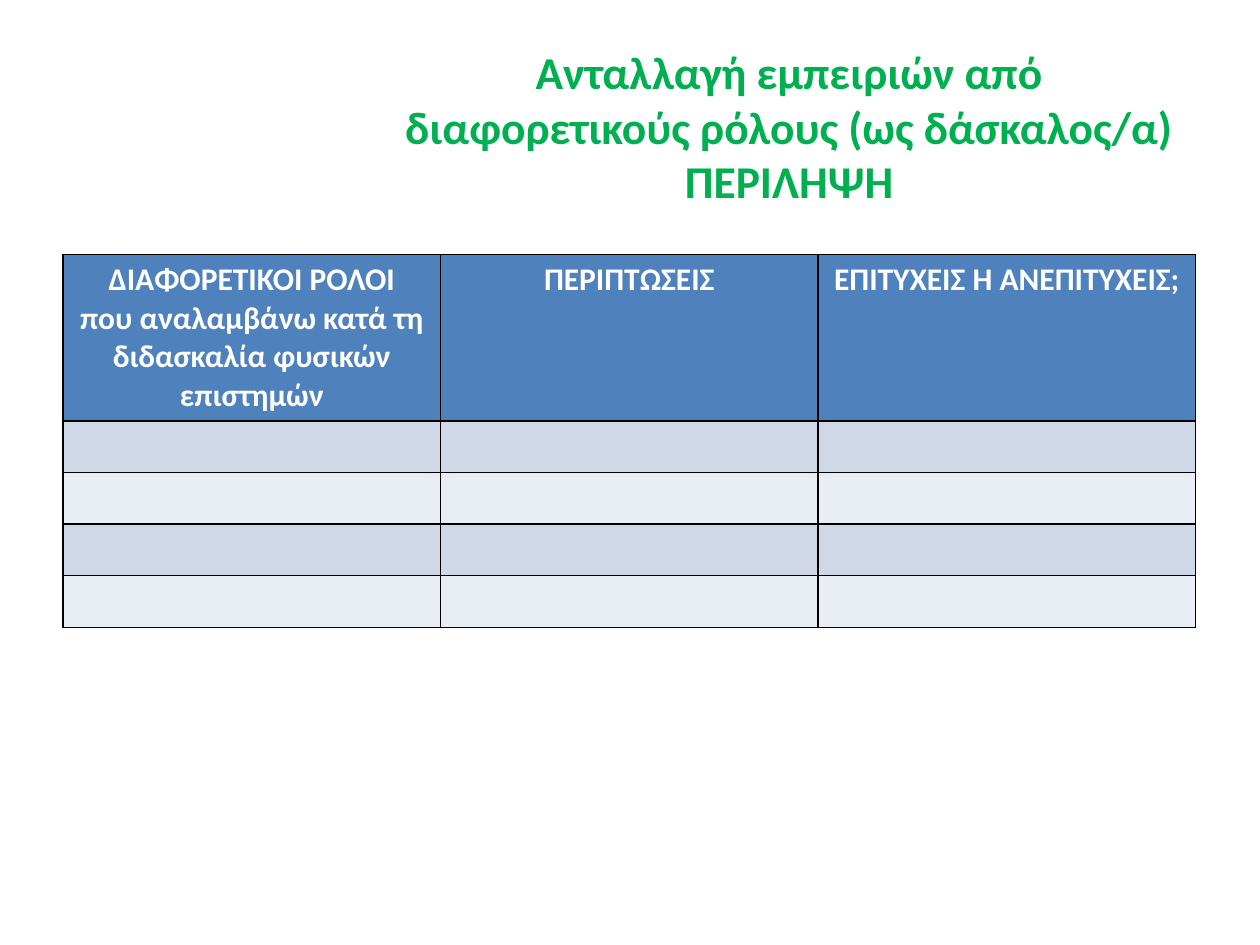
from typing import NamedTuple

from lxml import etree
from pptx import Presentation
from pptx import util as u
from pptx.dml import color
from pptx.enum import text
from pptx.oxml import ns

FONT = "Calibri"
HEADER_FILL = "4F81BD"
BAND_FILLS = ("D0D8E8", "E9EDF4")
BODY_ROWS = 4
HEADER_HEIGHT, BODY_HEIGHT = 1.32, 0.41


class Box(NamedTuple):
    left: float
    top: float
    width: float
    height: float

    def lengths(self) -> list[u.Length]:
        return [u.Inches(value) for value in self]


class Style(NamedTuple):
    size: float
    colour: str


TITLE_STYLE = Style(26, "00B050")
HEADER_STYLE = Style(18, "FFFFFF")

TITLE = "Ανταλλαγή εμπειριών από διαφορετικούς ρόλους (ως δάσκαλος/α) ΠΕΡΙΛΗΨΗ"
HEADERS = (
    ("ΔΙΑΦΟΡΕΤΙΚΟΙ ΡΟΛΟΙ", "που αναλαμβάνω κατά τη διδασκαλία φυσικών επιστημών"),
    ("ΠΕΡΙΠΤΩΣΕΙΣ",),
    ("ΕΠΙΤΥΧΕΙΣ Ή ΑΝΕΠΙΤΥΧΕΙΣ;",),
)


def rgb(colour: str) -> color.RGBColor:
    return color.RGBColor.from_string(colour)


def write(frame, lines: tuple[str, ...], style: Style) -> None:
    """Fill a text frame with centred bold paragraphs."""
    frame.word_wrap = True
    frame.text = "\n".join(lines)
    for paragraph in frame.paragraphs:
        paragraph.alignment = text.PP_ALIGN.CENTER
        font = paragraph.font
        font.name, font.size, font.bold = FONT, u.Pt(style.size), True
        font.color.rgb = rgb(style.colour)


def add_borders(cell, colour: str = "000000", width: float = 1) -> None:
    properties = cell._tc.get_or_add_tcPr()
    for side in ("lnL", "lnR", "lnT", "lnB"):
        line = etree.SubElement(properties, ns.qn(f"a:{side}"), w=str(u.Pt(width)))
        fill = etree.SubElement(line, ns.qn("a:solidFill"))
        etree.SubElement(fill, ns.qn("a:srgbClr"), val=colour)


def paint(cell, colour: str) -> None:
    """Give a cell its borders and then its fill, in schema order."""
    add_borders(cell)
    cell.fill.solid()
    cell.fill.fore_color.rgb = rgb(colour)


def add_title(slide, box: Box) -> None:
    frame = slide.shapes.add_textbox(*box.lengths()).text_frame
    frame.vertical_anchor = text.MSO_ANCHOR.MIDDLE
    write(frame, (TITLE,), TITLE_STYLE)


def add_roles_table(slide, box: Box) -> None:
    roles = slide.shapes.add_table(BODY_ROWS + 1, len(HEADERS), *box.lengths()).table
    for index, row in enumerate(roles.rows):
        row.height = u.Inches(BODY_HEIGHT if index else HEADER_HEIGHT)
        fill = BAND_FILLS[(index - 1) % 2] if index else HEADER_FILL
        for cell in row.cells:
            paint(cell, fill)
    for column, lines in enumerate(HEADERS):
        write(roles.cell(0, column).text_frame, lines, HEADER_STYLE)


def main() -> None:
    deck = Presentation()
    deck.slide_width, deck.slide_height = u.Inches(10), u.Inches(7.5)
    slide = deck.slides.add_slide(deck.slide_layouts[6])
    add_title(slide, Box(3.03, 0.3, 6.47, 1.4))
    table_height = HEADER_HEIGHT + BODY_ROWS * BODY_HEIGHT
    add_roles_table(slide, Box(0.5, 2.02, 8.99, table_height))
    deck.save("out.pptx")


if __name__ == "__main__":
    main()
